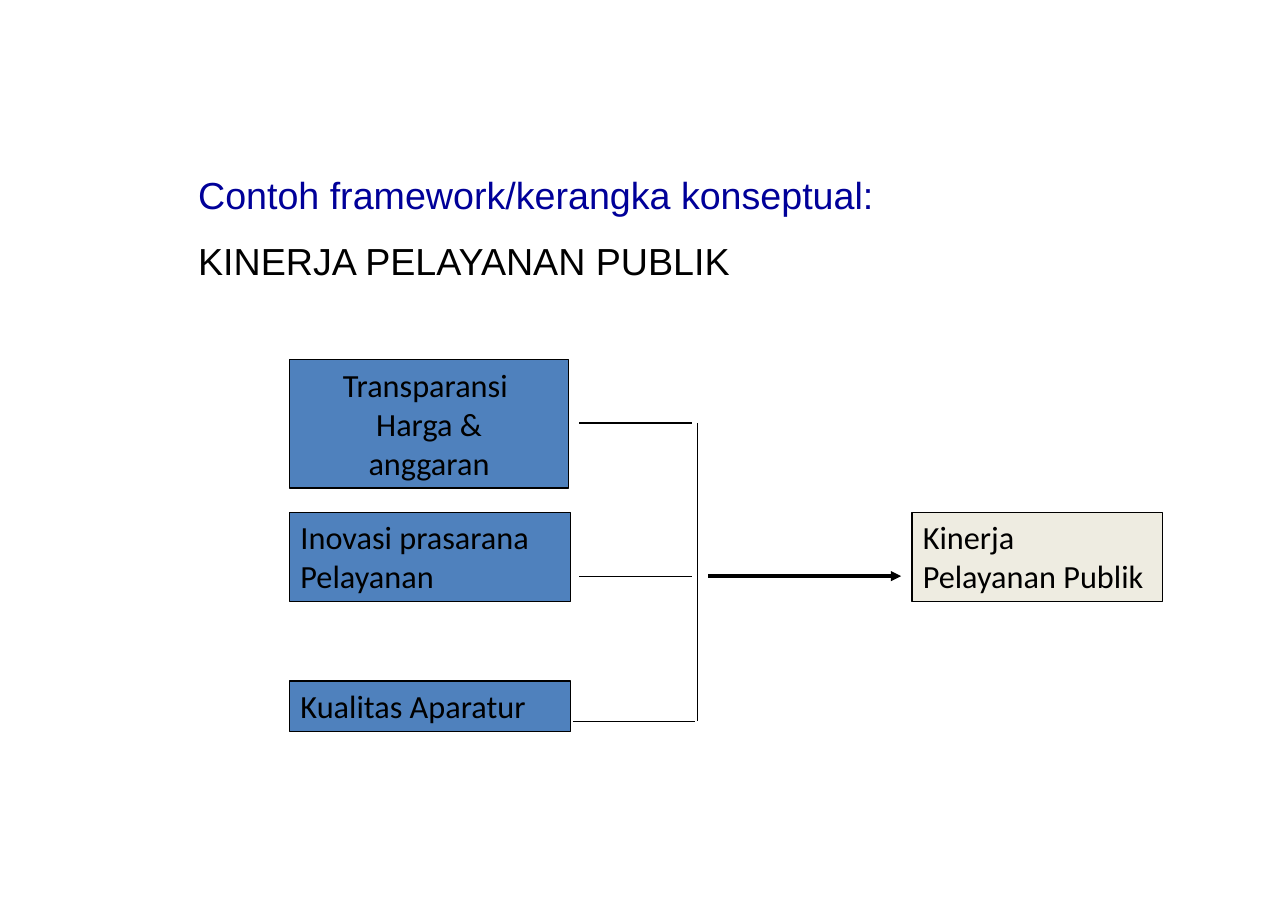
from lxml import etree
from pptx import Presentation
from pptx.dml.color import RGBColor
from pptx.enum.shapes import MSO_CONNECTOR, MSO_SHAPE
from pptx.enum.text import MSO_ANCHOR, PP_ALIGN
from pptx.oxml.ns import qn
from pptx.util import Cm, Pt

BLACK = RGBColor(0x00, 0x00, 0x00)
NAVY = RGBColor(0x00, 0x00, 0x99)
BLUE = RGBColor(0x4F, 0x81, 0xBD)
CREAM = RGBColor(0xEE, 0xEC, 0xE1)
LEFT, CENTER = PP_ALIGN.LEFT, PP_ALIGN.CENTER
TOP, MIDDLE = MSO_ANCHOR.TOP, MSO_ANCHOR.MIDDLE
RECTANGLE = MSO_SHAPE.RECTANGLE
STRAIGHT = MSO_CONNECTOR.STRAIGHT


def write(shape, lines, *, size, font, colors=(BLACK,), align=LEFT,
          anchor=TOP, wrap=True, gap=0):
    frame = shape.text_frame
    frame.word_wrap = wrap
    frame.vertical_anchor = anchor
    for index, line in enumerate(lines):
        para = frame.add_paragraph() if index else frame.paragraphs[0]
        para.alignment = align
        if index:
            para.space_before = Pt(gap)
        span = para.add_run()
        span.text = line
        span.font.size = Pt(size)
        span.font.name = font
        span.font.color.rgb = colors[index % len(colors)]


deck = Presentation()
deck.slide_width, deck.slide_height = Cm(29.7), Cm(21)
page = deck.slides.add_slide(deck.slide_layouts[6])

# Heading
heading = page.shapes.add_textbox(Cm(4.32), Cm(3.84), Cm(21.29), Cm(2.87))
write(heading, ["Contoh framework/kerangka konseptual:", "KINERJA PELAYANAN PUBLIK"],
      size=24.6, font="Arial", colors=(NAVY, BLACK), gap=13.5)

# Three factors and the outcome
boxes = [
    (6.68, 8.28, 6.43, 2.97, BLUE, ["Transparansi ", "Harga &", "anggaran"],
     {"align": CENTER, "anchor": MIDDLE, "wrap": False}),
    (6.68, 11.81, 6.48, 2.06, BLUE, ["Inovasi prasarana Pelayanan"], {}),
    (6.68, 15.7, 6.48, 1.17, BLUE, ["Kualitas Aparatur"], {}),
    (21.03, 11.81, 5.77, 2.06, CREAM, ["Kinerja Pelayanan Publik"], {}),
]
for left, top, width, height, fill, lines, layout in boxes:
    box = page.shapes.add_shape(RECTANGLE, Cm(left), Cm(top), Cm(width), Cm(height))
    box.shadow.inherit = False
    box.fill.solid()
    box.fill.fore_color.rgb = fill
    box.line.color.rgb = BLACK
    box.line.width = Pt(0.75)
    write(box, lines, size=21.1, font="Calibri", **layout)

# Bracket joining the factors, then the arrow to the outcome
links = [
    (13.36, 9.75, 15.95, 9.75, 0.75, False),
    (13.36, 13.28, 15.95, 13.28, 0.75, False),
    (13.21, 16.64, 16.03, 16.64, 0.75, False),
    (16.08, 9.75, 16.08, 16.61, 0.75, False),
    (16.33, 13.28, 20.78, 13.28, 2.25, True),
]
for x1, y1, x2, y2, weight, has_arrow in links:
    link = page.shapes.add_connector(STRAIGHT, Cm(x1), Cm(y1), Cm(x2), Cm(y2))
    link.line.color.rgb = BLACK
    link.line.width = Pt(weight)
    if has_arrow:
        outline = link.line._get_or_add_ln()
        etree.SubElement(outline, qn("a:tailEnd"), type="triangle")
    etree.SubElement(link._element.spPr, qn("a:effectLst"))

deck.save("out.pptx")
